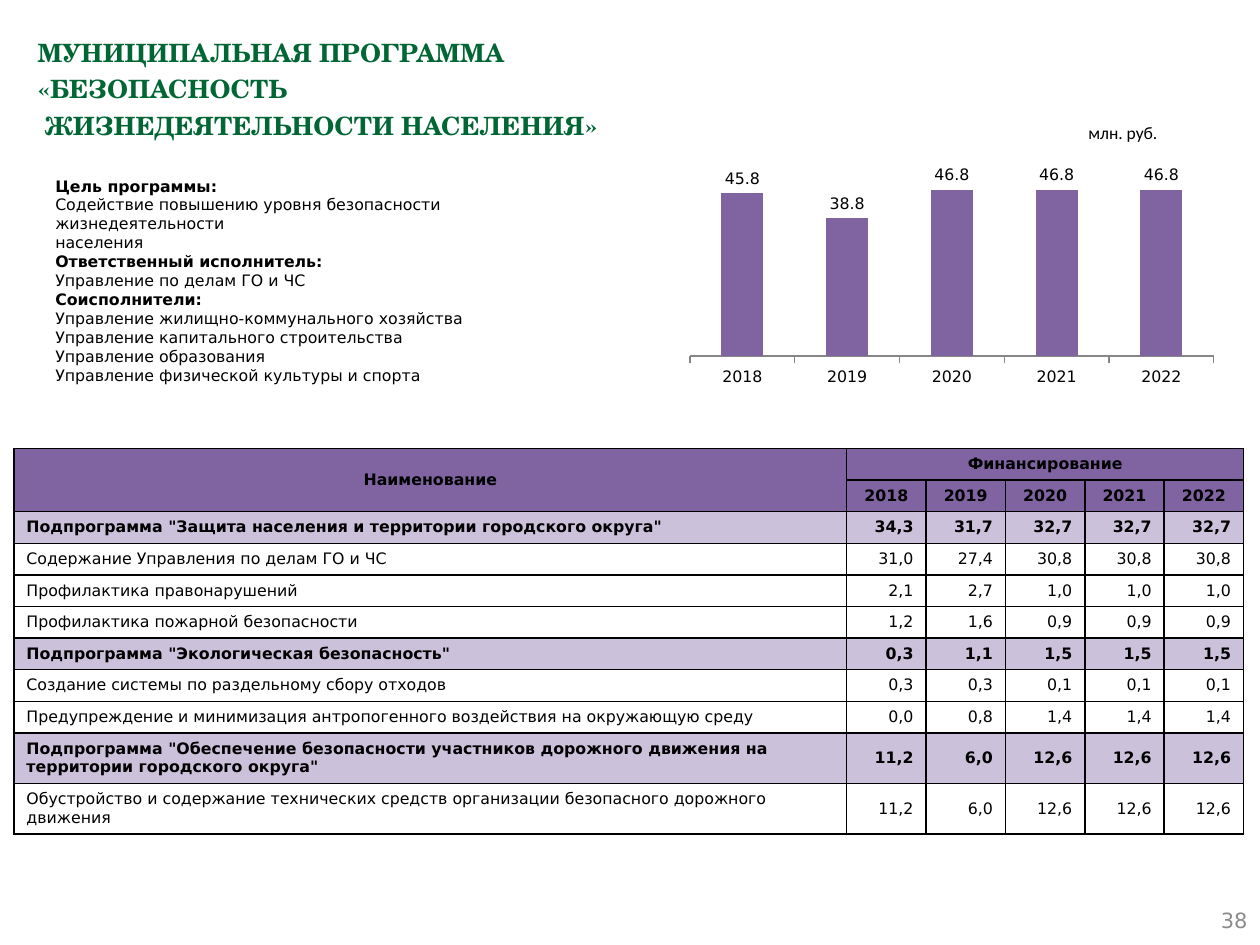
from dataclasses import dataclass
from typing import Any

from lxml.etree import SubElement
from pptx import Presentation
from pptx.chart.data import CategoryChartData
from pptx.dml.color import RGBColor
from pptx.enum.chart import XL_CHART_TYPE, XL_LABEL_POSITION, XL_TICK_LABEL_POSITION, XL_TICK_MARK
from pptx.enum.text import MSO_ANCHOR, PP_ALIGN
from pptx.oxml import parse_xml
from pptx.oxml.ns import nsdecls, qn
from pptx.util import Inches, Pt

COLORS = {
    "black": "000000",
    "title": "006633",
    "accent": "8064A2",
    "tint": "CCC1DA",
    "axis": "868686",
    "page": "8C8C8C",
}
BODY, HEADING, UNIT = "DejaVu Sans", "TeX Gyre Schola", "Calibri"
YEARS = ["2018", "2019", "2020", "2021", "2022"]
TOTALS = [45.8, 38.8, 46.8, 46.8, 46.8]
PROGRAM = [
    "Цель программы:",
    "Содействие повышению уровня безопасности жизнедеятельности",
    "населения",
    "Ответственный исполнитель:",
    "Управление по делам ГО и ЧС",
    "Соисполнители:",
    "Управление жилищно-коммунального хозяйства",
    "Управление капитального строительства",
    "Управление образования",
    "Управление физической культуры и спорта",
]
FUNDING = [
    ('Подпрограмма "Защита населения и территории городского округа"', "34,3", "31,7", "32,7"),
    ("Содержание Управления по делам ГО и ЧС", "31,0", "27,4", "30,8"),
    ("Профилактика правонарушений", "2,1", "2,7", "1,0"),
    ("Профилактика пожарной безопасности", "1,2", "1,6", "0,9"),
    ('Подпрограмма "Экологическая безопасность"', "0,3", "1,1", "1,5"),
    ("Создание системы по раздельному сбору отходов", "0,3", "0,3", "0,1"),
    ("Предупреждение и минимизация антропогенного воздействия на окружающую среду", "0,0", "0,8", "1,4"),
    ('Подпрограмма "Обеспечение безопасности участников дорожного движения на территории городского округа"',
     "11,2", "6,0", "12,6"),
    ("Обустройство и содержание технических средств организации безопасного дорожного движения",
     "11,2", "6,0", "12,6"),
]


def rgb(name):
    return RGBColor.from_string(COLORS[name])


def style_font(font, size=9, name=BODY, color="black", bold=False):
    font.size, font.name, font.bold = Pt(size), name, bold
    font.color.rgb = rgb(color)


def write_text(frame, paragraphs, align=PP_ALIGN.LEFT, spacing=None, bold=False, **style):
    for index, line in enumerate(paragraphs):
        paragraph = frame.paragraphs[0] if index == 0 else frame.add_paragraph()
        paragraph.text = line
        paragraph.alignment = align
        if spacing:
            paragraph.line_spacing = spacing
        for run in paragraph.runs:
            style_font(run.font, bold=bold or line.endswith(":"), **style)


@dataclass
class ProgramSlide:
    slide: Any
    step: float = 0.1

    def span(self, *units):
        return [Inches(unit * self.step) for unit in units]

    def text(self, area, paragraphs, anchor=MSO_ANCHOR.TOP, **style):
        frame = self.slide.shapes.add_textbox(*self.span(*area)).text_frame
        frame.word_wrap = True
        frame.vertical_anchor = anchor
        write_text(frame, paragraphs, **style)

    def column_chart(self, area, categories, values, top):
        data = CategoryChartData(number_format="0.0")
        data.categories = categories
        data.add_series("Series 1", values)
        chart = self.slide.shapes.add_chart(
            XL_CHART_TYPE.COLUMN_CLUSTERED, *self.span(*area), data).chart
        chart.has_legend = chart.has_title = False
        style_font(chart.font)

        amounts = chart.value_axis
        amounts.visible = amounts.has_major_gridlines = False
        amounts.minimum_scale, amounts.maximum_scale = 0, top
        years = chart.category_axis
        years.major_tick_mark = XL_TICK_MARK.OUTSIDE
        years.tick_label_position = XL_TICK_LABEL_POSITION.LOW
        years.format.line.color.rgb = rgb("axis")
        style_font(years.tick_labels.font)

        plot = chart.plots[0]
        plot.gap_width, plot.vary_by_categories = 150, False
        bars = plot.series[0]
        bars.format.fill.solid()
        bars.format.fill.fore_color.rgb = rgb("accent")
        labels = bars.data_labels
        labels.show_value = True
        labels.number_format, labels.number_format_is_linked = "#,##0.0", False
        labels.position = XL_LABEL_POSITION.OUTSIDE_END
        style_font(labels.font)
        self.fix_plot_area(chart, x=0.02, y=0.05, w=0.96, h=0.8)

    def fix_plot_area(self, chart, **shares):
        plot_area = chart.plots[0]._element.getparent()
        for old in plot_area.findall(qn("c:layout")):
            plot_area.remove(old)
        sizes = "".join(f'<c:{key} val="{share}"/>' for key, share in shares.items())
        plot_area.insert(0, parse_xml(
            f'<c:layout {nsdecls("c")}><c:manualLayout><c:layoutTarget val="inner"/>'
            f'<c:xMode val="edge"/><c:yMode val="edge"/>{sizes}</c:manualLayout></c:layout>'))

    def cell(self, cell, text, fill=None, **style):
        cell.vertical_anchor = MSO_ANCHOR.MIDDLE
        properties = cell._tc.get_or_add_tcPr()
        for side in ("a:lnL", "a:lnR", "a:lnT", "a:lnB"):
            line = SubElement(properties, qn(side), w=str(Pt(1)))
            SubElement(SubElement(line, qn("a:solidFill")), qn("a:srgbClr"), val=COLORS["black"])
        if fill:
            cell.fill.solid()
            cell.fill.fore_color.rgb = rgb(fill)
        else:
            cell.fill.background()
        write_text(cell.text_frame, [text], **style)

    def funding_table(self, area, name_width, year_width, years, items):
        table = self.slide.shapes.add_table(
            len(items) + 2, len(years) + 1, *self.span(*area)).table
        table.first_row = table.horz_banding = False
        widths = self.span(name_width, *[year_width] * len(years))
        for column, width in zip(table.columns, widths):
            column.width = width
        for row in table.rows:
            row.height = self.span(2.4)[0]

        headers = [["Наименование", "Финансирование"] + [""] * (len(years) - 1), ["", *years]]
        for row, header in enumerate(headers):
            for column, text in enumerate(header):
                self.cell(table.cell(row, column), text, "accent", align=PP_ALIGN.CENTER, bold=True)
        table.cell(0, 0).merge(table.cell(1, 0))
        table.cell(0, 1).merge(table.cell(0, len(years)))

        for row, (name, first, second, later) in enumerate(items, len(headers)):
            subprogram = name.startswith("Подпрограмма")
            fill = "tint" if subprogram else None
            amounts = [first, second] + [later] * (len(years) - 2)
            for column, text in enumerate([name, *amounts]):
                align = PP_ALIGN.RIGHT if column else PP_ALIGN.LEFT
                self.cell(table.cell(row, column), text, fill, align=align, bold=subprogram)


def main():
    deck = Presentation()
    deck.slide_width, deck.slide_height = Inches(10), Inches(7.5)
    page = ProgramSlide(deck.slides.add_slide(deck.slide_layouts[6]))
    page.text((2, 2, 96.1, 7.9),
              ["МУНИЦИПАЛЬНАЯ ПРОГРАММА\n«БЕЗОПАСНОСТЬ\n ЖИЗНЕДЕЯТЕЛЬНОСТИ НАСЕЛЕНИЯ»"],
              spacing=1.2, size=14.4, name=HEADING, color="title", bold=True)
    page.text((76.7, 71, 23.3, 4), ["38"], anchor=MSO_ANCHOR.MIDDLE,
              align=PP_ALIGN.RIGHT, size=12, color="page")
    page.column_chart((53.9, 13.2, 43.3, 17.7), YEARS, TOTALS, top=50)
    page.funding_table((1.1, 35.6, 97.6, 29), 66.1, 6.3, YEARS, FUNDING)
    page.text((3.4, 13.5, 46.1, 17.7), PROGRAM)
    page.text((85.4, 9.2, 8, 2.7), ["млн. руб."], size=10, name=UNIT)
    deck.save("out.pptx")


if __name__ == "__main__":
    main()
